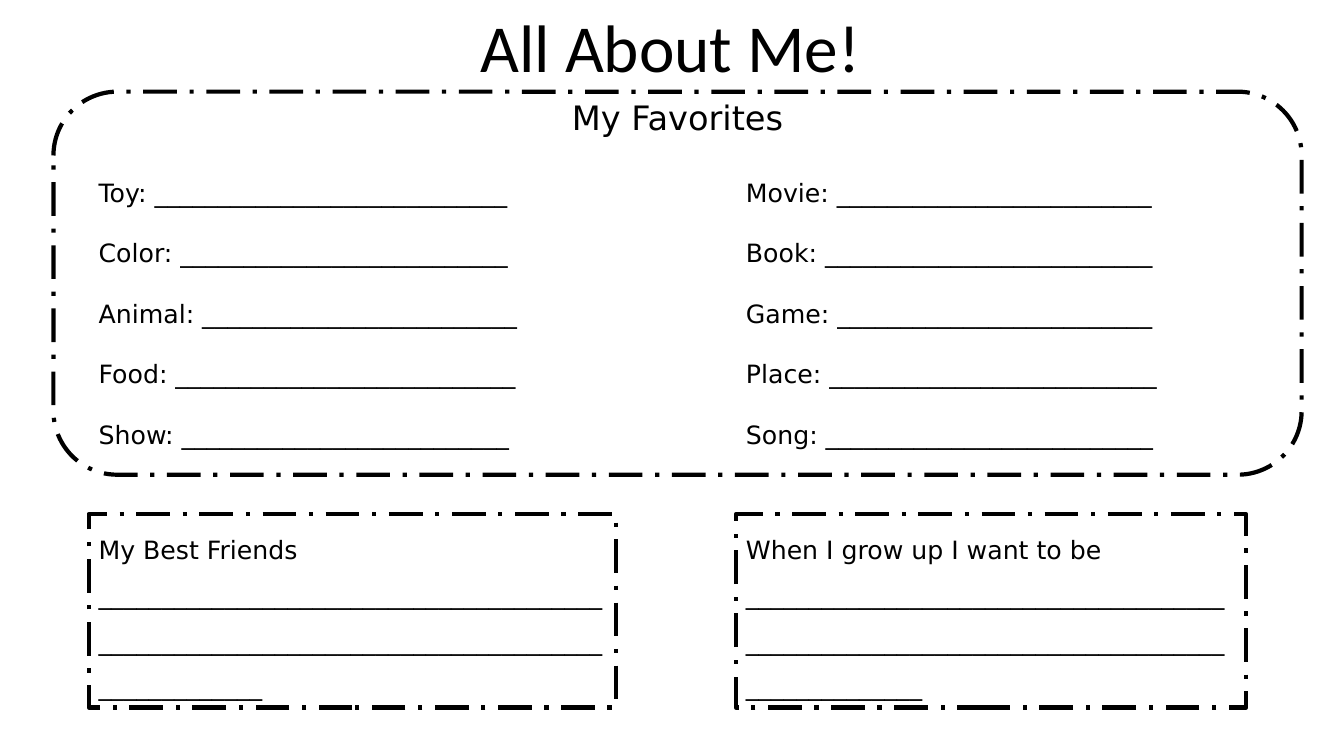
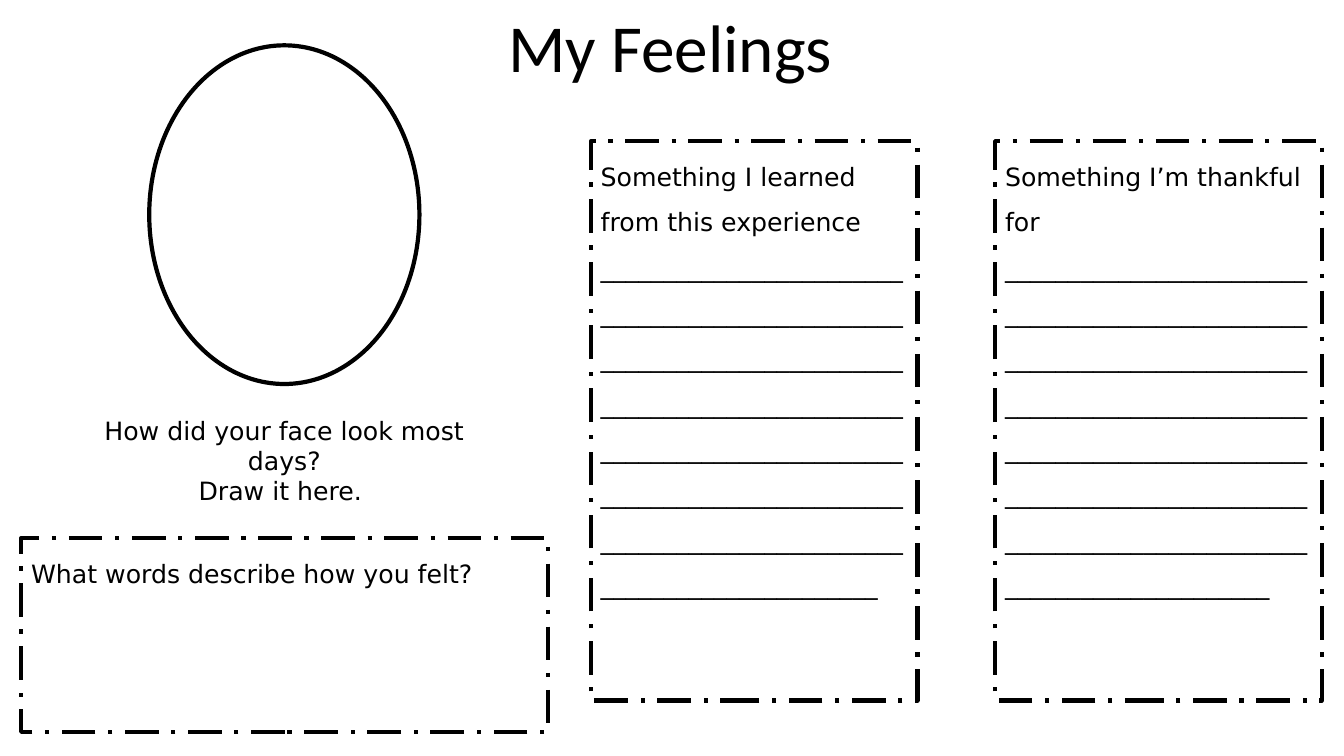
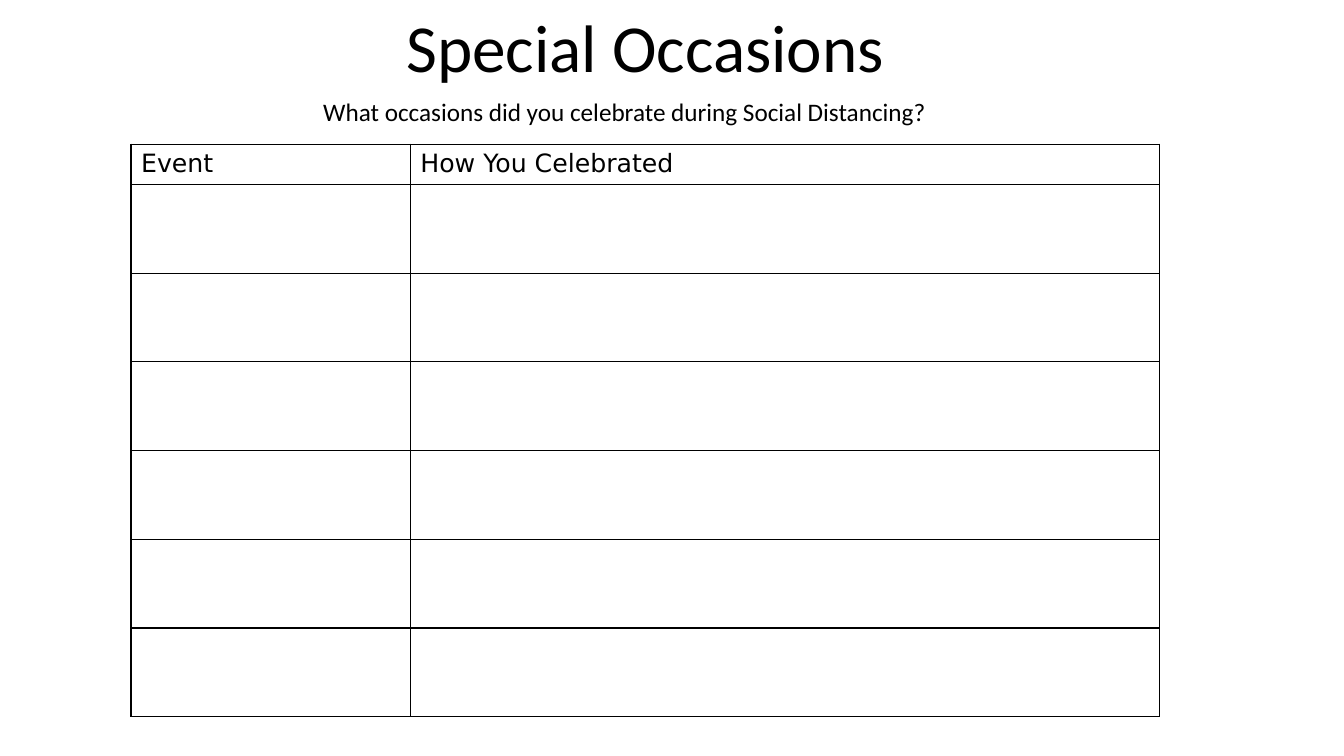
from lxml import etree
from pptx import Presentation
from pptx.dml.color import RGBColor
from pptx.enum.dml import MSO_LINE
from pptx.enum.shapes import MSO_SHAPE
from pptx.enum.text import MSO_ANCHOR, MSO_AUTO_SIZE, PP_ALIGN
from pptx.oxml.ns import qn
from pptx.util import Pt

PX = 9144
BLACK = "000000"
TITLE_FONT = "Calibri"
BODY_FONT = "DejaVu Sans"
LEFT, CENTER = PP_ALIGN.LEFT, PP_ALIGN.CENTER
RECTANGLE, ROUNDED, OVAL = MSO_SHAPE.RECTANGLE, MSO_SHAPE.ROUNDED_RECTANGLE, MSO_SHAPE.OVAL
DASH_DOT = MSO_LINE.LONG_DASH_DOT
TOP = MSO_ANCHOR.TOP
GROW = MSO_AUTO_SIZE.SHAPE_TO_FIT_TEXT


def color(value):
    return RGBColor.from_string(value)


def emu(box):
    return [length * PX for length in box]


def write(frame, text, size=18, font=BODY_FONT, align=LEFT, spacing=None):
    for index, line in enumerate(text.split("\n")):
        para = frame.add_paragraph() if index else frame.paragraphs[0]
        para.alignment = align
        if spacing:
            para.line_spacing = spacing
        span = para.add_run()
        span.text = line
        span.font.size = Pt(size)
        span.font.name = font
        span.font.color.rgb = color(BLACK)


def fit(frame):
    frame.word_wrap = True
    frame.auto_size = GROW
    frame.vertical_anchor = TOP


def add_text(page, box, text, **style):
    frame = page.shapes.add_textbox(*emu(box)).text_frame
    fit(frame)
    write(frame, text, **style)


def add_outline(page, kind, box, dash=None):
    shape = page.shapes.add_shape(kind, *emu(box))
    shape.shadow.inherit = False
    shape.fill.background()
    shape.line.color.rgb = color(BLACK)
    shape.line.width = Pt(3)
    if dash:
        shape.line.dash_style = dash
    return shape


def add_page(deck, title, left=39):
    page = deck.slides.add_slide(deck.slide_layouts[6])
    add_text(page, (left, 0, 1252, 91), title, size=48, font=TITLE_FONT, align=CENTER)
    return page


def add_prompt(page, box, prompt, blanks=0):
    frame = add_outline(page, RECTANGLE, box, DASH_DOT).text_frame
    fit(frame)
    text = prompt + "\n" + "_" * blanks if blanks else prompt
    write(frame, text, spacing=1.5)


def add_favorites(page, box, columns):
    left, top, width, height = box
    add_outline(page, ROUNDED, box, DASH_DOT)
    add_text(page, (left + 35, top, width - 70, 50), "My Favorites", size=24, align=CENTER)
    for offset, column_width, entries in columns:
        lines = [f"{label}: {'_' * blanks}" for label, blanks in entries]
        add_text(page, (left + offset, top + 50, column_width, height - 67),
                 "\n".join(lines), spacing=2)


def add_face(page, box):
    left, top, width, height = box
    add_outline(page, OVAL, box)
    add_text(page, (left - 56, top + height + 26, width + 112, 101),
             "How did your face look most days?\nDraw it here. ", align=CENTER)


def style_cell(cell):
    properties = cell._tc.get_or_add_tcPr()
    for side in ("a:lnL", "a:lnR", "a:lnT", "a:lnB"):
        border = etree.SubElement(properties, qn(side), w=str(Pt(1)))
        fill = etree.SubElement(border, qn("a:solidFill"))
        etree.SubElement(fill, qn("a:srgbClr"), val=BLACK)
    cell.fill.background()


def add_occasions(page, left, top, widths, heights, headings):
    box = (left, top, sum(widths), sum(heights))
    table = page.shapes.add_table(len(heights), len(widths), *emu(box)).table
    for column, width in zip(table.columns, widths):
        column.width = width * PX
    for row, height in zip(table.rows, heights):
        row.height = height * PX
    for cell in table.iter_cells():
        style_cell(cell)
    for index, heading in enumerate(headings):
        write(table.cell(0, index).text_frame, heading)


def build_about_me(deck):
    page = add_page(deck, "All About Me!")
    add_favorites(page, (53, 91, 1238, 380), [
        (35, 541, [("Toy", 28), ("Color", 26), ("Animal", 25), ("Food", 27), ("Show", 26)]),
        (677, 526, [("Movie", 25), ("Book", 26), ("Game", 25), ("Place", 26), ("Song", 26)]),
    ])
    add_prompt(page, (88, 510, 523, 192), "My Best Friends", 93)
    add_prompt(page, (730, 510, 506, 192), "When I grow up I want to be", 90)


def build_feelings(deck):
    page = add_page(deck, "My Feelings")
    add_face(page, (148, 45, 268, 336))
    add_prompt(page, (21, 534, 523, 192), "What words describe how you felt?")
    add_prompt(page, (586, 140, 324, 555), "Something I learned from this experience", 190)
    add_prompt(page, (987, 140, 324, 555), "Something I’m thankful for", 189)


def build_occasions(deck):
    page = add_page(deck, "Special Occasions", left=14)
    add_occasions(page, 130, 143, [277, 743], [38] + [88] * 6, ["Event", "How You Celebrated"])
    add_text(page, (156, 91, 927, 40),
             "What occasions did you celebrate during Social Distancing?",
             font=TITLE_FONT, align=CENTER)


def main():
    deck = Presentation()
    deck.slide_width, deck.slide_height = emu((1333, 750))
    build_about_me(deck)
    build_feelings(deck)
    build_occasions(deck)
    deck.save("out.pptx")


if __name__ == "__main__":
    main()
